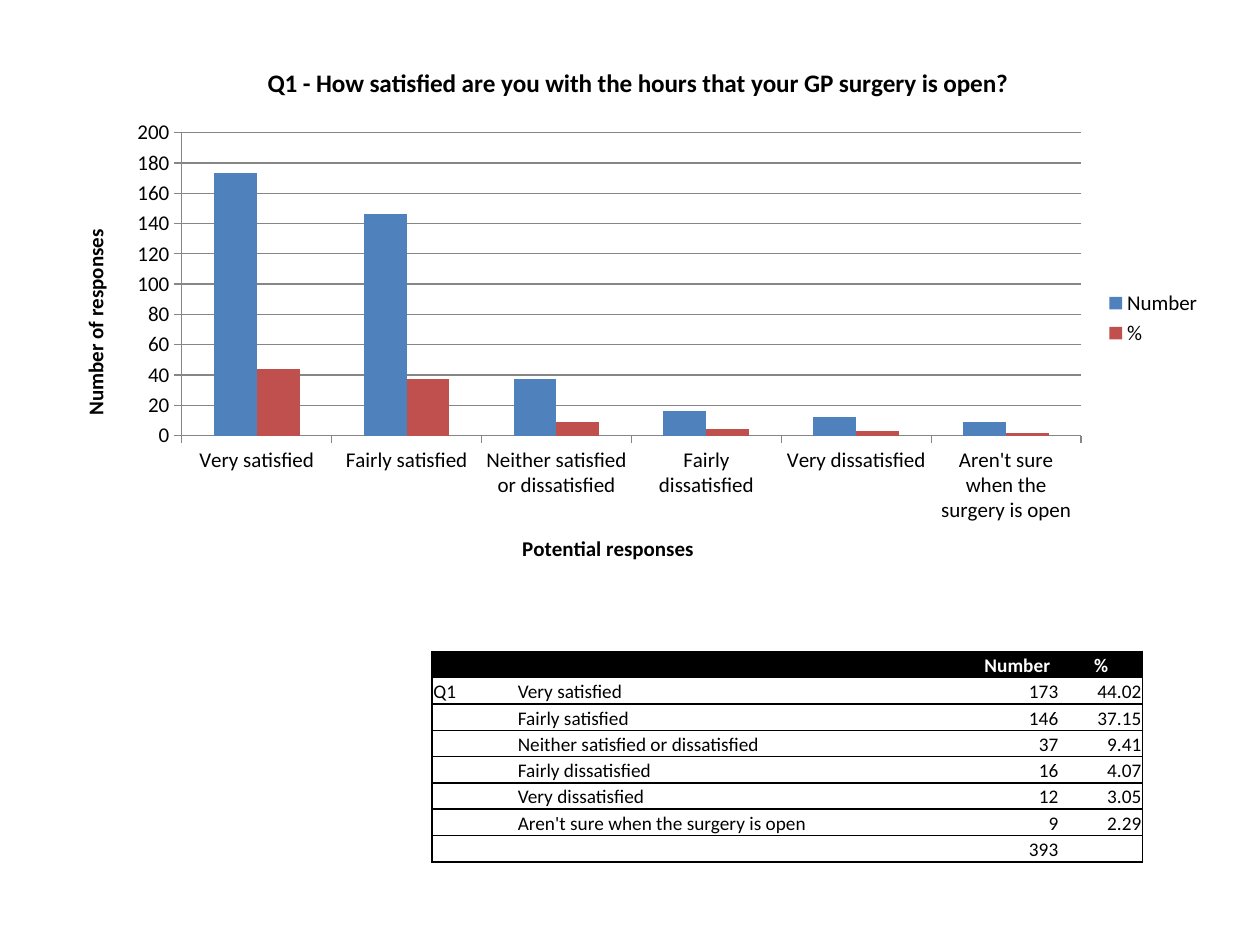
import pptx
import pptx.util
import pptx.chart.data
import pptx.dml.color
import pptx.enum.chart
import pptx.enum.text
import pptx.oxml
import pptx.oxml.ns
from lxml import etree

inch, pt = pptx.util.Inches, pptx.util.Pt
qn = pptx.oxml.ns.qn
mid = pptx.enum.text.PP_ALIGN.CENTER
right = pptx.enum.text.PP_ALIGN.RIGHT


def hue(code):
    return pptx.dml.color.RGBColor.from_string(code)


def put(frame, text, size=11, bold=False, color="000000", align=None):
    para = frame.paragraphs[0]
    para.alignment = align
    if not text:  # an empty line still needs its height
        end = etree.SubElement(para._p, qn("a:endParaRPr"))
        end.set("sz", str(size * 100))
        etree.SubElement(end, qn("a:latin")).set("typeface", "Calibri")
        return
    run = para.add_run()
    run.text = text
    run.font.name, run.font.size, run.font.bold = "Calibri", pt(size), bold
    run.font.color.rgb = hue(color)


deck = pptx.Presentation()
wide, high = inch(10), inch(7.5)
deck.slide_width, deck.slide_height = wide, high
slide = deck.slides.add_slide(deck.slide_layouts[6])

# Survey answers: label, number, percent
rows = [
    ("Very satisfied", 173, 44.02),
    ("Fairly satisfied", 146, 37.15),
    ("Neither satisfied or dissatisfied", 37, 9.41),
    ("Fairly dissatisfied", 16, 4.07),
    ("Very dissatisfied", 12, 3.05),
    ("Aren't sure when the surgery is open", 9, 2.29),
]

# Column chart
data = pptx.chart.data.CategoryChartData()
data.categories = [row[0] for row in rows]
data.add_series("Number", [row[1] for row in rows])
data.add_series("%", [round(row[2]) for row in rows])
chart = slide.shapes.add_chart(
    pptx.enum.chart.XL_CHART_TYPE.COLUMN_CLUSTERED,
    inch(0.43), inch(0.36), inch(9.21), inch(4.33), data).chart
chart.font.name, chart.font.size = "Calibri", pt(12)
chart.font.color.rgb = hue("000000")
plot = chart.plots[0]
plot.gap_width, plot.overlap, plot.vary_by_categories = 150, 0, False
for bar, code in zip(plot.series, ("4F81BD", "C0504D")):
    bar.format.fill.solid()
    bar.format.fill.fore_color.rgb = hue(code)
    bar.invert_if_negative = False
chart.has_legend = True
chart.legend.position = pptx.enum.chart.XL_LEGEND_POSITION.RIGHT
chart.legend.include_in_layout = False

# Axes and titles
cat, val = chart.category_axis, chart.value_axis
val.minimum_scale, val.maximum_scale, val.major_unit = 0, 200, 20
val.has_major_gridlines = True
for part in (cat, val, val.major_gridlines):
    part.format.line.color.rgb = hue("868686")
    part.format.line.width = pt(0.75)
for axis in (cat, val):
    axis.major_tick_mark = pptx.enum.chart.XL_TICK_MARK.OUTSIDE
put(chart.chart_title.text_frame,
    "Q1 - How satisfied are you with the hours that your GP surgery is open?",
    size=14.4, bold=True)
put(cat.axis_title.text_frame, "Potential responses", size=12, bold=True)
put(val.axis_title.text_frame, "Number of responses", size=12, bold=True)
val.axis_title.text_frame._txBody.bodyPr.set("rot", "-5400000")
val.axis_title.text_frame._txBody.bodyPr.set("vert", "horz")

# Places of plot and titles, as shares of the chart
area = chart._chartSpace.chart.plotArea
spots = [
    (area, {"x": 0.11, "y": 0.16, "w": 31 / 40, "h": 5 / 9}),
    (chart.chart_title._element, {"x": 0.18, "y": 0.03}),
    (cat.axis_title._element, {"x": 0.4, "y": 0.89}),
    (val.axis_title._element, {"x": 0.02, "y": 0.33}),
]
for node, spot in spots:
    for old in node.findall(qn("c:layout")):
        node.remove(old)
    lay = etree.Element(qn("c:layout"))
    node.insert(0 if node is area else 1, lay)
    man = etree.SubElement(lay, qn("c:manualLayout"))
    if node is area:
        etree.SubElement(man, qn("c:layoutTarget")).set("val", "inner")
    for key in ("x", "y"):
        etree.SubElement(man, qn(f"c:{key}Mode")).set("val", "edge")
    for key, share in spot.items():
        etree.SubElement(man, qn(f"c:{key}")).set("val", str(share))

# Table of results
grid = [("", "", "Number", "%")]
grid += [("" if i else "Q1", *row) for i, row in enumerate(rows)]
grid.append(("", "", sum(row[1] for row in rows), ""))
cols = (0.67, 3.64, 0.67, 0.66)
table = slide.shapes.add_table(
    len(grid), len(cols), inch(3.43), inch(5.17),
    inch(sum(cols)), inch(1.67)).table
table.first_row = table.horz_banding = False
for col, width in zip(table.columns, cols):
    col.width = inch(width)
for r, line in enumerate(grid):
    table.rows[r].height = inch(1.67 / len(grid))
    for c, item in enumerate(line):
        cell = table.cell(r, c)
        cell.margin_left = cell.margin_right = cell.margin_top = inch(0.01)
        cell.margin_bottom = 0
        cell.vertical_anchor = pptx.enum.text.MSO_ANCHOR.BOTTOM
        head = r == 0
        put(cell.text_frame, str(item), bold=head,
            color="FFFFFF" if head else "000000",
            align=None if c < 2 else mid if head else right)

        # Rules above and below, and at the outer sides
        prop = cell._tc.get_or_add_tcPr()
        for side in "LRTB":
            edge = etree.SubElement(prop, qn(f"a:ln{side}"))
            if side in "TB" or (side, c) in (("L", 0), ("R", 3)):
                edge.set("w", str(pt(1)))
                fill = etree.SubElement(edge, qn("a:solidFill"))
                etree.SubElement(fill, qn("a:srgbClr")).set("val", "000000")
            else:
                etree.SubElement(edge, qn("a:noFill"))
        cell.fill.solid()
        cell.fill.fore_color.rgb = hue("000000" if head else "FFFFFF")

deck.save("out.pptx")
